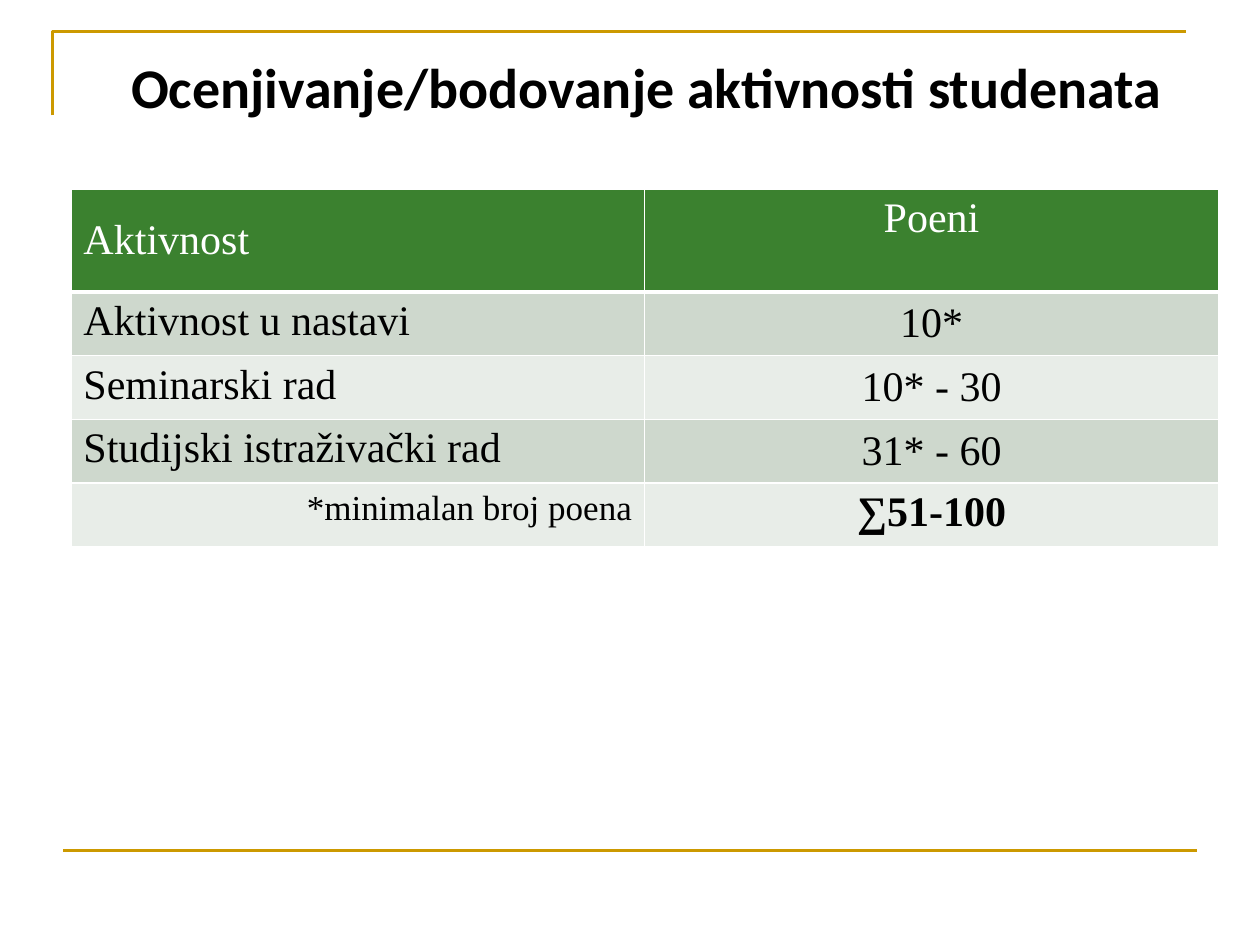
from lxml.etree import SubElement
from pptx import Presentation
from pptx.dml.color import RGBColor as Rgb
from pptx.enum.shapes import MSO_CONNECTOR as Connector
from pptx.enum.text import MSO_ANCHOR as Anchor, PP_ALIGN as Align
from pptx.oxml.ns import qn
from pptx.util import Inches, Pt

COLORS = {"gold": "CC9900", "head": "3B812F", "odd": "CED8CD",
          "even": "E8EDE8", "white": "FFFFFF", "black": "000000"}
BODY = {"name": "Times New Roman", "size": Pt(24), "bold": False}
TITLE = {"name": "Calibri", "size": Pt(32), "bold": True}
NOTE = BODY | {"size": Pt(20)}
TOTAL = BODY | {"bold": True}


class SlideBuilder:
    """Draws styled elements on a slide with a grid of 120 columns and 90 rows."""

    def __init__(self, deck):
        self.slide = deck.slides.add_slide(deck.slide_layouts[6])
        self.col, self.row = deck.slide_width / 120, deck.slide_height / 90

    def place(self, *lengths):
        return [round(length * (self.row if i % 2 else self.col))
                for i, length in enumerate(lengths)]

    def style_line(self, shape):
        shape.line.color.rgb = Rgb.from_string(COLORS["gold"])
        shape.line.width = Pt(1.5)

    def corner(self, start, *points):
        builder = self.slide.shapes.build_freeform(*self.place(*start))
        builder.add_line_segments([self.place(*point) for point in points], close=False)
        frame = builder.convert_to_shape()
        frame.fill.background()
        frame.shadow.inherit = False
        self.style_line(frame)

    def rule(self, start, end):
        rule = self.slide.shapes.add_connector(
            Connector.STRAIGHT, *self.place(*start), *self.place(*end))
        self.style_line(rule)
        SubElement(rule.element.spPr, qn("a:effectLst"))

    def label(self, frame, text, font, color, align):
        paragraph = frame.paragraphs[0]
        paragraph.alignment = align
        run = paragraph.add_run()
        run.text = text
        for attribute, value in font.items():
            setattr(run.font, attribute, value)
        run.font.color.rgb = Rgb.from_string(COLORS[color])

    def title(self, text, box):
        frame = self.slide.shapes.add_textbox(*self.place(*box)).text_frame
        frame.word_wrap = True
        frame.vertical_anchor = Anchor.BOTTOM
        self.label(frame, text, TITLE, "black", Align.CENTER)

    def border(self, cell, bottom):
        properties = cell._tc.get_or_add_tcPr()
        for side, width in (("L", 1), ("R", 1), ("T", 1), ("B", bottom)):
            edge = SubElement(properties, qn(f"a:ln{side}"), w=str(int(Pt(width))))
            fill = SubElement(edge, qn("a:solidFill"))
            SubElement(fill, qn("a:srgbClr"), val=COLORS["white"])

    def table(self, rows, box, heights):
        table = self.slide.shapes.add_table(len(rows), 2, *self.place(*box)).table
        for r, (cells, height) in enumerate(zip(rows, heights)):
            table.rows[r].height = round(height * self.row)
            band = ("odd" if r % 2 else "even") if r else "head"
            for c, (text, font, align, anchor) in enumerate(cells):
                cell = table.cell(r, c)
                cell.vertical_anchor = anchor
                self.border(cell, 1 if r else 3)
                cell.fill.solid()
                cell.fill.fore_color.rgb = Rgb.from_string(COLORS[band])
                self.label(cell.text_frame, text, font, "black" if r else "white", align)


def main():
    deck = Presentation()
    deck.slide_width, deck.slide_height = Inches(10), Inches(7.5)
    page = SlideBuilder(deck)
    page.corner((5, 11), (5, 3), (113, 3))
    page.rule((6, 81), (114, 81))
    page.title("Ocenjivanje/bodovanje aktivnosti studenata", (10.2, 2, 102.8, 10))

    scores = [("Aktivnost u nastavi", "10*"), ("Seminarski rad", "10* - 30"),
              ("Studijski istraživački rad", "31* - 60")]
    header = [("Aktivnost", BODY, Align.LEFT, Anchor.MIDDLE),
              ("Poeni", BODY, Align.CENTER, Anchor.TOP)]
    activities = [[(activity, BODY, Align.LEFT, Anchor.TOP),
                   (points, BODY, Align.CENTER, Anchor.MIDDLE)]
                  for activity, points in scores]
    total = [("*minimalan broj poena", NOTE, Align.RIGHT, Anchor.TOP),
             ("∑51-100", TOTAL, Align.CENTER, Anchor.TOP)]
    page.table([header, *activities, total], (6.75, 18, 109.3, 34.08), [9.8] + [6.07] * 4)
    deck.save("out.pptx")


if __name__ == "__main__":
    main()
